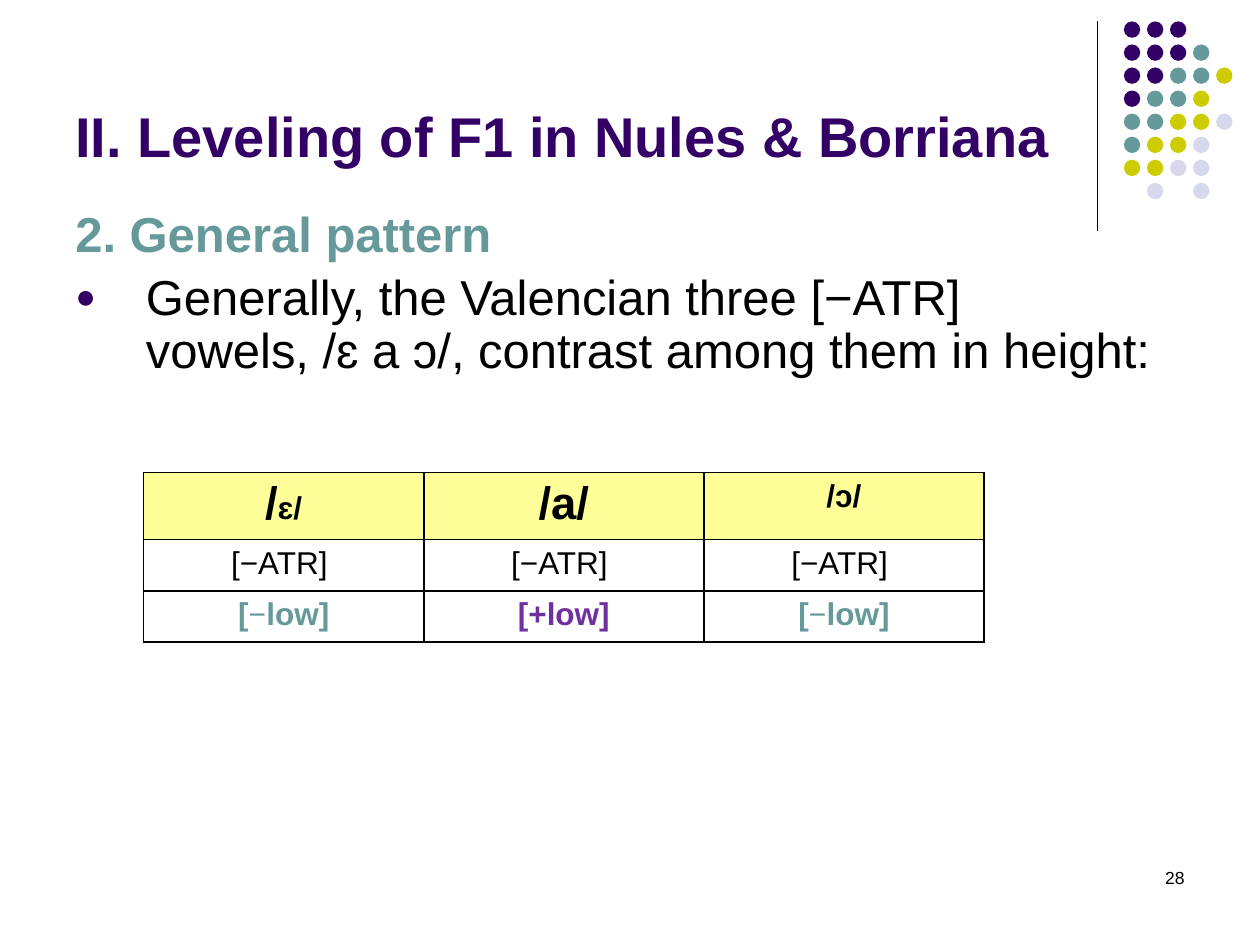
from lxml import etree
from pptx import Presentation
from pptx.dml.color import RGBColor
from pptx.enum.shapes import MSO_CONNECTOR, MSO_SHAPE
from pptx.enum.text import MSO_ANCHOR, PP_ALIGN
from pptx.oxml.ns import qn
from pptx.util import Inches, Pt

LINE, OVAL = MSO_CONNECTOR.STRAIGHT, MSO_SHAPE.OVAL
TOP, BOTTOM = MSO_ANCHOR.TOP, MSO_ANCHOR.BOTTOM
LEFT, CENTER, RIGHT = PP_ALIGN.LEFT, PP_ALIGN.CENTER, PP_ALIGN.RIGHT
BLACK = RGBColor(0x00, 0x00, 0x00)
PLUM = RGBColor(0x33, 0x00, 0x66)
TEAL = RGBColor(0x66, 0x99, 0x99)
LIME = RGBColor(0xCC, 0xCC, 0x00)
MIST = RGBColor(0xD8, 0xD8, 0xEC)
CREAM = RGBColor(0xFF, 0xFF, 0x99)
VIOLET = RGBColor(0x70, 0x30, 0xA0)

deck = Presentation()
deck.slide_width, deck.slide_height = Inches(10), Inches(7.5)
slide = deck.slides.add_slide(deck.slide_layouts[6])
shapes = slide.shapes


def add_box(left, top, width, height, lines, anchor=TOP):
    box = shapes.add_textbox(Inches(left), Inches(top), Inches(width), Inches(height))
    frame = box.text_frame
    frame.word_wrap = True
    frame.vertical_anchor = anchor
    frame.text = "\n".join(lines)
    return frame.paragraphs


def style(para, size, color, bold=False, align=LEFT):
    para.alignment = align
    for run in para.runs:
        font = run.font
        font.name, font.size, font.bold = "Arial", Pt(size), bold
        font.color.rgb = color


# Rule beside the dots
rule = shapes.add_connector(LINE, Inches(8.71), Inches(0.17), Inches(8.71), Inches(1.83))
rule.line.color.rgb = BLACK
rule.line.width = Pt(0.75)
etree.SubElement(rule._element.spPr, qn("a:effectLst"))

# Dot pattern: one letter per dot, a point for a gap
INKS = {"P": PLUM, "T": TEAL, "L": LIME, "M": MIST}
DOTS = ["PPP", "PPPT", "PPTTL", "PTTL", "TTLLM", "TLLM", "LLMM", ".M.M"]
STEP, SIZE = 0.183, 0.13
for row, marks in enumerate(DOTS):
    for col, mark in enumerate(marks):
        if mark in INKS:
            dot = shapes.add_shape(OVAL, Inches(8.92 + col * STEP), Inches(0.17 + row * STEP),
                                   Inches(SIZE), Inches(SIZE))
            dot.shadow.inherit = False
            dot.fill.solid()
            dot.fill.fore_color.rgb = INKS[mark]
            dot.line.fill.background()

# Page number and title
page = add_box(7.17, 6.83, 2.33, 0.5, ["28"])
style(page[0], 10, BLACK, align=RIGHT)
title = add_box(0.5, 0.44, 8.25, 0.95, ["II. Leveling of F1 in Nules & Borriana"], BOTTOM)
style(title[0], 32, PLUM, bold=True)

# Heading and bullet
head, point = add_box(0.5, 1.62, 9, 5.43, [
    "2. General pattern",
    "Generally, the Valencian three [−ATR] vowels, /ɛ a ɔ/, contrast among them in height:",
])
style(head, 28, TEAL, bold=True)
style(point, 28, BLACK)
for para, indent in ((head, 0.44), (point, 0.56)):
    para.line_spacing = 0.9
    para.space_before = Pt(5.6)
    props = para._p.get_or_add_pPr()
    props.set("marL", str(Inches(indent)))
    props.set("indent", str(-Inches(indent)))
tint = etree.SubElement(props, qn("a:buClr"))
etree.SubElement(tint, qn("a:srgbClr"), val=str(PLUM))
etree.SubElement(props, qn("a:buSzPct"), val="70000")
etree.SubElement(props, qn("a:buFont"), typeface="Arial")
etree.SubElement(props, qn("a:buChar"), char="●")

# Vowel table: each cell is a list of runs
ROWS = [
    [["/", "ɛ/"], ["/a/"], ["/ɔ/"]],
    [["[−ATR] "]] * 3,
    [["[", "−", "low]"], ["[+low]"], ["[", "−", "low]"]],
]
grid = shapes.add_table(3, 3, Inches(1.14), Inches(3.75), Inches(6.67), Inches(1.22)).table
for row, cells in enumerate(ROWS):
    for col, parts in enumerate(cells):
        cell = grid.cell(row, col)
        para = cell.text_frame.paragraphs[0]
        for part in parts:
            para.add_run().text = part
        color = BLACK if row < 2 else VIOLET if col == 1 else TEAL
        style(para, 18, color, bold=row != 1, align=CENTER)
        for run in para.runs:
            if run.text in ("/", "/a/"):
                run.font.size = Pt(26)
            elif run.text == "−":
                run.font.name = "Times New Roman"
        # Borders come before the fill in the cell's XML
        props = cell._tc.get_or_add_tcPr()
        for side in ("lnL", "lnR", "lnT", "lnB"):
            edge = etree.SubElement(props, qn("a:" + side), w=str(Pt(1)))
            paint = etree.SubElement(edge, qn("a:solidFill"))
            etree.SubElement(paint, qn("a:srgbClr"), val=str(BLACK))
        if row == 0:
            cell.fill.solid()
            cell.fill.fore_color.rgb = CREAM
        else:
            cell.fill.background()

deck.save("out.pptx")
